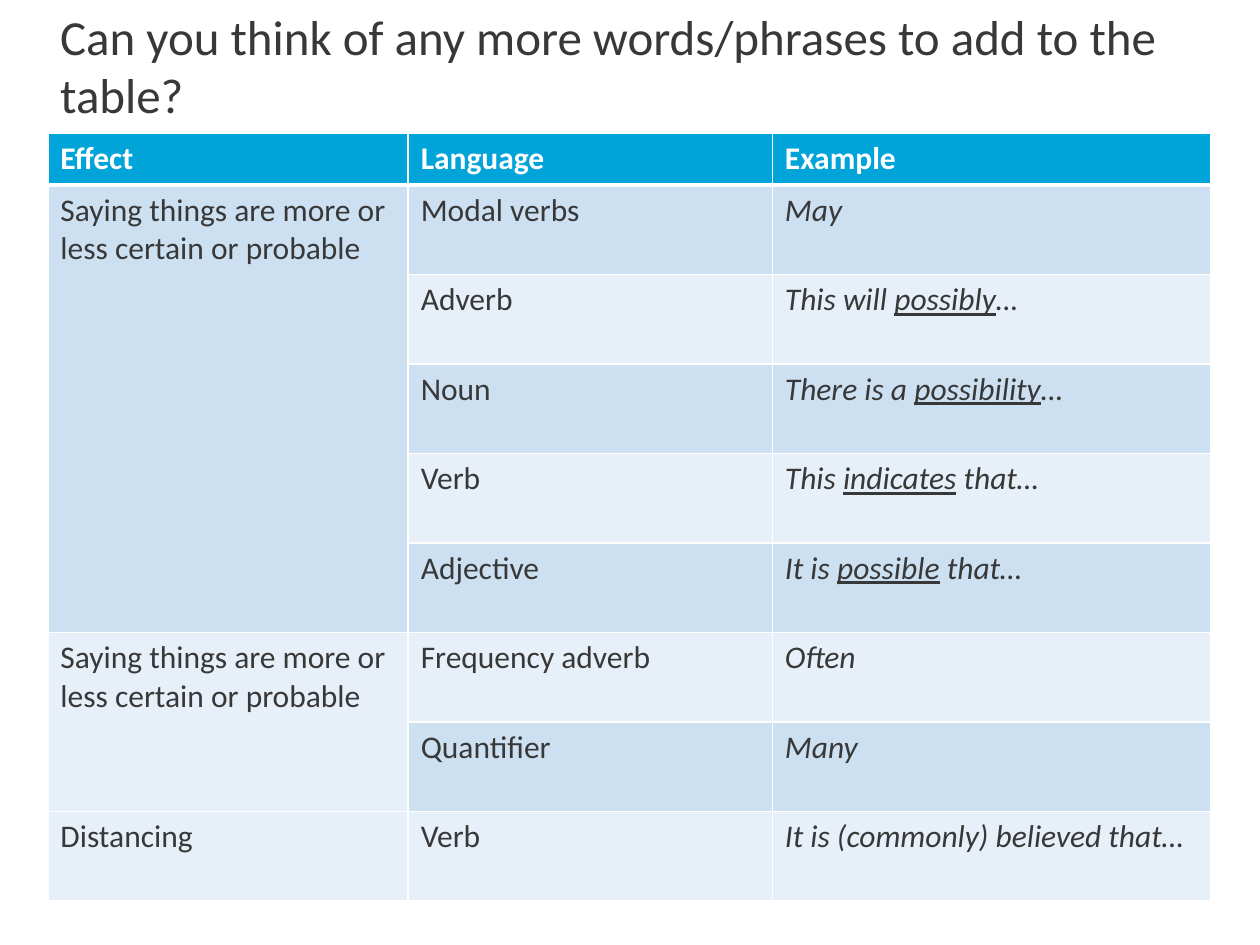
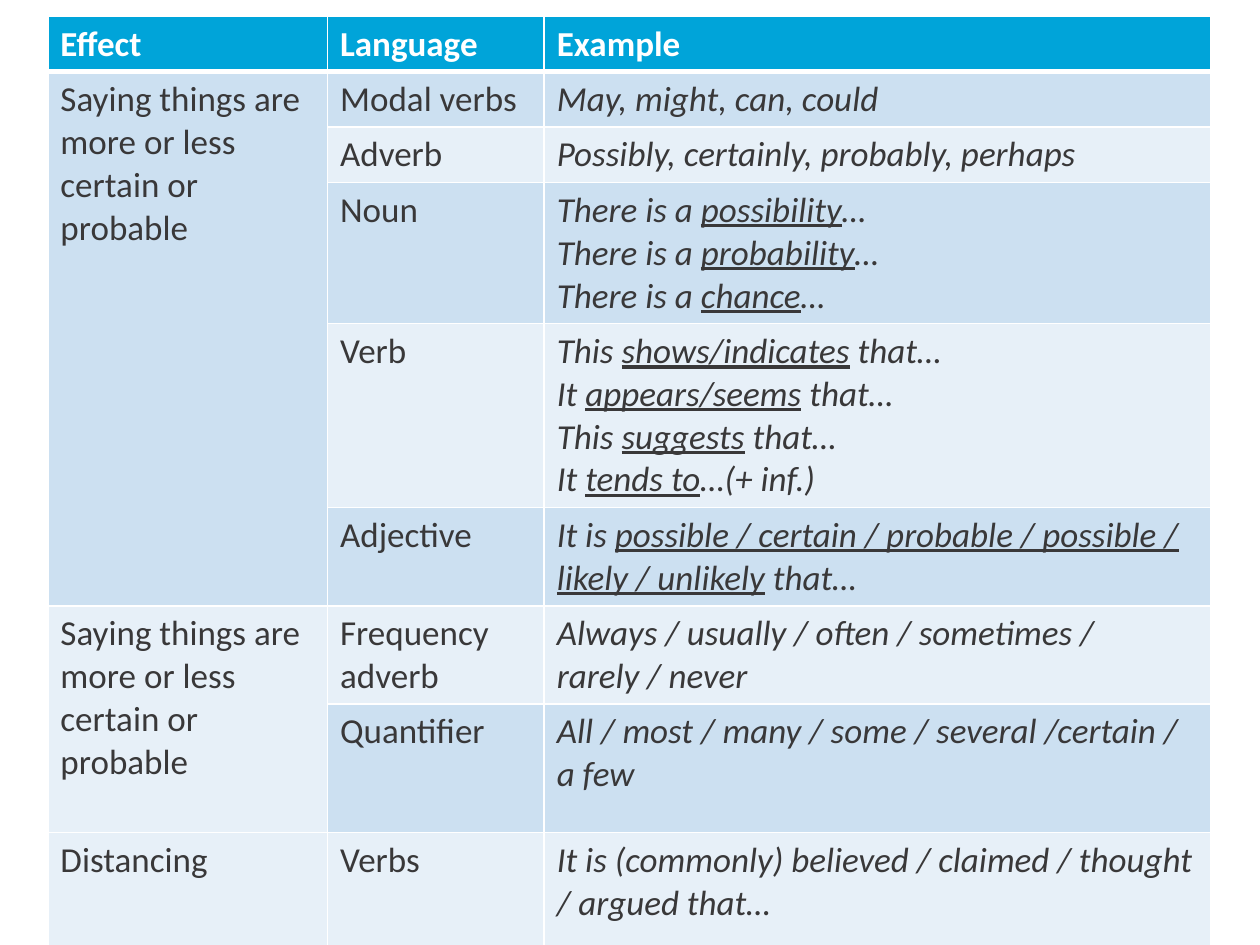
from lxml import etree
from pptx import Presentation
from pptx import util as u
from pptx.dml.color import RGBColor
from pptx.oxml import ns

FONT = "Calibri"
INK = RGBColor(0x39, 0x38, 0x39)
WHITE = RGBColor(0xFF, 0xFF, 0xFF)
HEADER_BLUE = RGBColor(0x00, 0xA4, 0xD9)
BANDS = (RGBColor(0xCC, 0xE0, 0xF1), RGBColor(0xE7, 0xF0, 0xF8))

LEFT, WIDTH = 0.38, 9.23
HEADINGS = ("Effect", "Language", "Example")
CERTAINTY = "Saying things are more or less certain or probable"
EFFECT_GROUPS = ((1, 5, CERTAINTY), (6, 7, CERTAINTY), (8, 8, "Distancing"))
LANGUAGE = ("Modal verbs", "Adverb", "Noun", "Verb", "Adjective",
            "Frequency adverb", "Quantifier")

PROMPT_EXAMPLES = (
    "May",
    "This will _possibly_…",
    "There is a _possibility_…",
    "This _indicates_ that…",
    "It is _possible_ that…",
    "Often",
    "Many",
    "It is (commonly) believed that…",
)
ANSWER_EXAMPLES = (
    "May, might, can, could",
    "Possibly, certainly, probably, perhaps",
    "There is a _possibility_…\nThere is a _probability_…\nThere is a _chance_…",
    "This _shows/indicates_ that…\nIt _appears/seems_ that…\n"
    "This _suggests_ that…\nIt _tends to_…(+ inf.)",
    "It is _possible / certain / probable / possible / likely / unlikely_ that…",
    "Always / usually / often / sometimes / rarely / never",
    "All / most / many / some / several /certain / a few",
    "It is (commonly) believed / claimed / thought / argued that…",
)


def write_text(frame, content, size, color=INK, bold=False, italic=False):
    """Write one paragraph per line, underlining what stands between underscores."""
    for number, line in enumerate(content.split("\n")):
        para = frame.add_paragraph() if number else frame.paragraphs[0]
        for position, part in enumerate(line.split("_")):
            span = para.add_run()
            span.text = part
            span.font.name = FONT
            span.font.size = u.Pt(size)
            span.font.color.rgb = color
            span.font.bold = bold
            span.font.italic = italic
            span.font.underline = position % 2 == 1


def set_borders(cell, top, bottom):
    """Give a cell white borders, with the top and bottom widths in points."""
    properties = cell._tc.get_or_add_tcPr()
    for side, width in (("L", 1), ("R", 1), ("T", top), ("B", bottom)):
        line = etree.SubElement(properties, ns.qn(f"a:ln{side}"), w=str(u.Pt(width)))
        fill = etree.SubElement(line, ns.qn("a:solidFill"))
        etree.SubElement(fill, ns.qn("a:srgbClr"), val=str(WHITE))


def style_cell(cell, row):
    """Apply the borders and the fill that belong to a row."""
    set_borders(cell, 3 if row == 1 else 1, 3 if row == 0 else 1)
    cell.fill.solid()
    cell.fill.fore_color.rgb = BANDS[(row - 1) % 2] if row else HEADER_BLUE


def add_language_table(slide, top, columns, heights, size, language, examples):
    """Add the table of effects, language and examples."""
    table = slide.shapes.add_table(
        len(heights), len(columns), u.Inches(LEFT), u.Inches(top),
        u.Inches(WIDTH), u.Inches(sum(heights))).table
    for column, width in zip(table.columns, columns):
        column.width = u.Inches(width)
    for row, height in enumerate(heights):
        table.rows[row].height = u.Inches(height)
        for column in range(len(columns)):
            style_cell(table.cell(row, column), row)
    for column, heading in enumerate(HEADINGS):
        write_text(table.cell(0, column).text_frame, heading, size, WHITE, bold=True)
    for first, last, effect in EFFECT_GROUPS:
        if last > first:
            table.cell(first, 0).merge(table.cell(last, 0))
        write_text(table.cell(first, 0).text_frame, effect, size)
    for row, (kind, example) in enumerate(zip(language, examples), start=1):
        write_text(table.cell(row, 1).text_frame, kind, size)
        write_text(table.cell(row, 2).text_frame, example, size, italic=True)


def add_title(slide, title):
    """Add the title across the top of a slide."""
    box = slide.shapes.add_textbox(
        u.Inches(LEFT), 0, u.Inches(WIDTH), u.Inches(1.04))
    box.text_frame.word_wrap = True
    write_text(box.text_frame, title, 28)


def main():
    """Build and save the deck."""
    deck = Presentation()
    deck.slide_width, deck.slide_height = u.Inches(10), u.Inches(7.5)
    blank = deck.slide_layouts[6]

    prompt = deck.slides.add_slide(blank)
    add_language_table(prompt, 1.06, (2.86, 2.89, 3.48), [0.41] + [0.71] * 8, 18,
                       LANGUAGE + ("Verb",), PROMPT_EXAMPLES)
    add_title(prompt, "Can you think of any more words/phrases to add to the table?")

    answers = deck.slides.add_slide(blank)
    add_language_table(answers, 0.13, (2.22, 1.72, 5.29),
                       [0.44] * 3 + [1.12, 1.46, 0.78, 0.78, 1.02, 0.99], 20,
                       LANGUAGE + ("Verbs",), ANSWER_EXAMPLES)

    deck.save("out.pptx")


if __name__ == "__main__":
    main()
